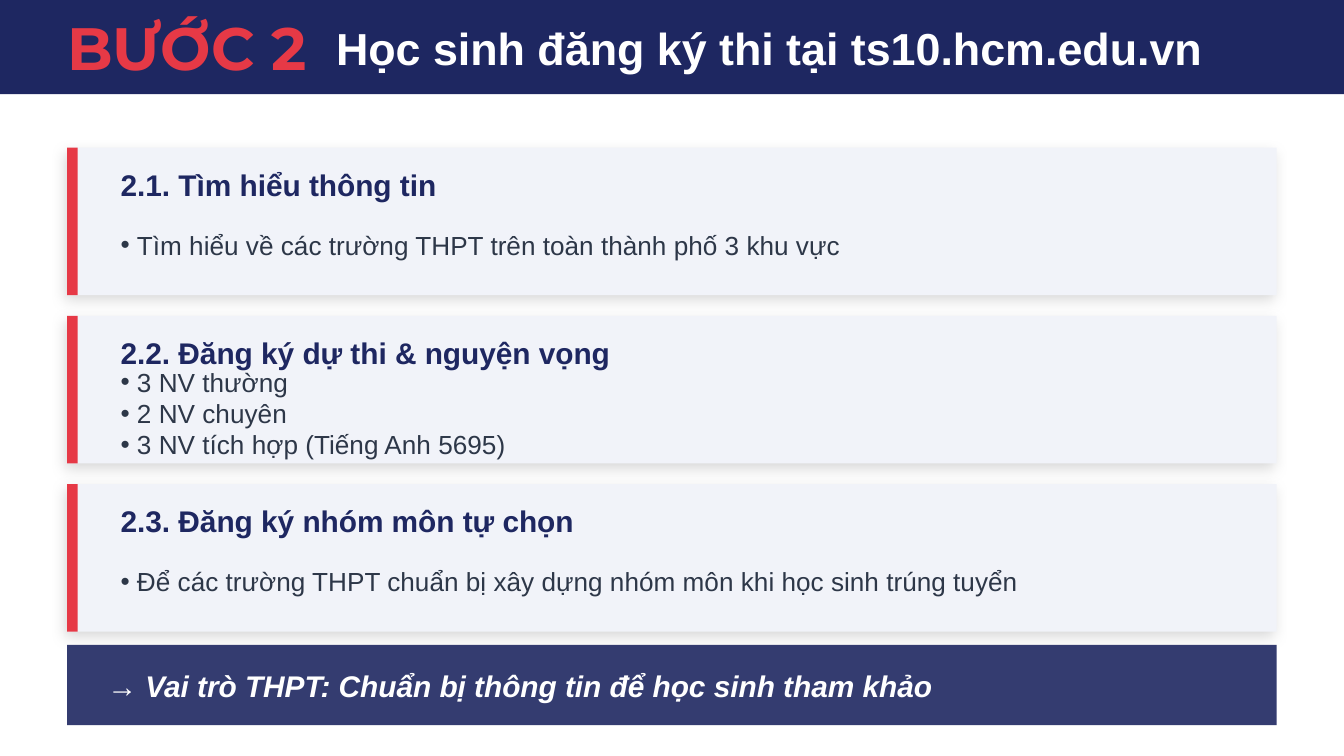
"""Build the slide on step 2 of the exam registration."""
from lxml.etree import SubElement
from pptx import Presentation
from pptx.dml.color import RGBColor
from pptx.enum.shapes import MSO_SHAPE
from pptx.enum.text import MSO_ANCHOR, MSO_AUTO_SIZE, PP_ALIGN
from pptx.oxml.ns import qn
from pptx.util import Cm, Pt

NAVY, RED, PALE, SLATE, WHITE = "1E2761", "E63946", "F1F3F9", "2D3748", "FFFFFF"


def paint(fill, colour):
    fill.solid()
    fill.fore_color.rgb = RGBColor.from_string(colour)


def write(text, left, top, width, height, shape=None, size=16, colour=NAVY,
          font="Arial", bold=True, italic=False, inset=0.25, bullet=False):
    area = [Cm(value) for value in (left, top, width, height)]
    shape = shape or slide.shapes.add_textbox(*area)
    shape.left, shape.top, shape.width, shape.height = area
    frame = shape.text_frame
    frame.text = text
    frame.word_wrap = True
    frame.auto_size = MSO_AUTO_SIZE.NONE
    frame.vertical_anchor = MSO_ANCHOR.MIDDLE
    frame.margin_left = frame.margin_right = Cm(inset)
    frame.margin_top = frame.margin_bottom = Cm(inset / 2)
    for paragraph in frame.paragraphs:
        paragraph.alignment = PP_ALIGN.LEFT
        if bullet:
            properties = paragraph._p.get_or_add_pPr()
            properties.set("marL", str(Cm(0.31)))
            properties.set("indent", str(-Cm(0.31)))
            SubElement(properties, qn("a:buFont"), typeface="Arial")
            SubElement(properties, qn("a:buChar"), char="•")
        for run in paragraph.runs:
            run.font.name, run.font.size = font, Pt(size)
            run.font.bold, run.font.italic = bold, italic
            paint(run.font.fill, colour)


prs = Presentation()
prs.slide_width, prs.slide_height = Cm(25.4), Cm(14.29)
slide = prs.slides.add_slide(prs.slide_layouts[5])
title = slide.shapes.title

steps = [
    ("2.1. Tìm hiểu thông tin",
     "Tìm hiểu về các trường THPT trên toàn thành phố 3 khu vực"),
    ("2.2. Đăng ký dự thi & nguyện vọng",
     "3 NV thường\n2 NV chuyên\n3 NV tích hợp (Tiếng Anh 5695)"),
    ("2.3. Đăng ký nhóm môn tự chọn",
     "Để các trường THPT chuẩn bị xây dựng nhóm môn khi học sinh trúng tuyển"),
]
card_tops = [2.79 + 3.18 * index for index in range(len(steps))]

blocks = [(0, 0, 25.4, 1.78, NAVY)]
for top in card_tops:
    blocks += [(1.27, top, 22.86, 2.79, PALE), (1.27, top, 0.2, 2.79, RED)]
blocks.append((1.27, 12.19, 22.86, 1.52, NAVY))

for left, top, width, height, colour in blocks:
    block = slide.shapes.add_shape(
        MSO_SHAPE.RECTANGLE, Cm(left), Cm(top), Cm(width), Cm(height))
    paint(block.fill, colour)
    block.line.fill.background()
    block.shadow.inherit = False
    if colour == PALE:
        effects = block.element.spPr.find(qn("a:effectLst"))
        shadow = SubElement(effects, qn("a:outerShdw"), blurRad=str(Pt(8)),
                            dist=str(Pt(3)), dir="8100000", algn="bl", rotWithShape="0")
        black = SubElement(shadow, qn("a:srgbClr"), val="000000")
        SubElement(black, qn("a:alpha"), val="15000")

summary_colour = block.element.spPr.find(".//" + qn("a:srgbClr"))
SubElement(summary_colour, qn("a:alpha"), val="90000")

block.element.addnext(title.element)
write("BƯỚC 2", 1.27, 0.25, 5.08, 1.27, size=32, colour=RED, font="Montserrat", inset=0)
write("Học sinh đăng ký thi tại ts10.hcm.edu.vn", 6.35, 0.38, 17.78, 1.02,
      shape=title, size=24, colour=WHITE, inset=0)

for top, (heading, details) in zip(card_tops, steps):
    write(heading, 2.03, top + 0.25, 21.34, 0.89)
    write(details, 2.03, top + 1.14, 21.34, 1.4, size=14, colour=SLATE,
          bold=False, bullet=True)

write("→ Vai trò THPT: Chuẩn bị thông tin để học sinh tham khảo",
      1.78, 12.45, 21.84, 1.02, colour=WHITE, italic=True)

prs.save("out.pptx")
